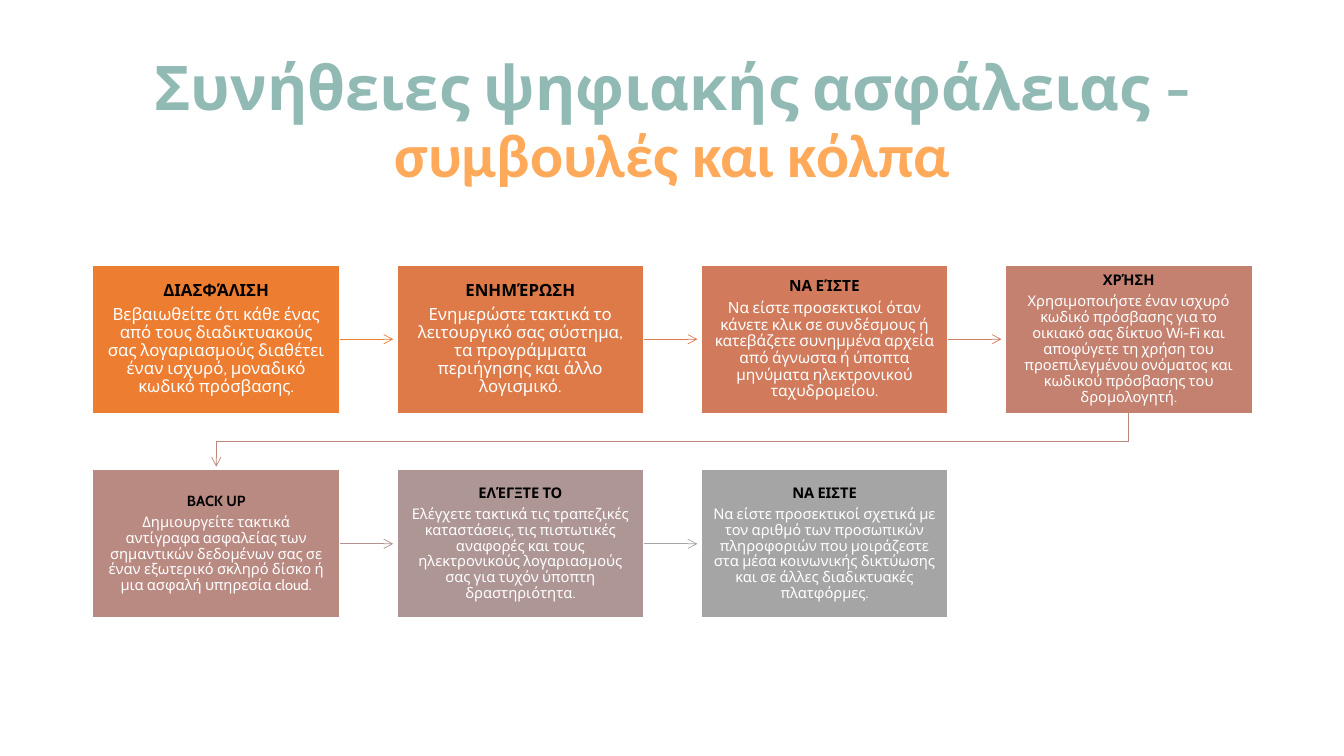
from lxml import etree
from pptx import Presentation
from pptx.dml.color import RGBColor
from pptx.enum.shapes import MSO_CONNECTOR as CONNECTOR, MSO_SHAPE as SHAPE
from pptx.enum.text import MSO_ANCHOR as ANCHOR, MSO_AUTO_SIZE as AUTO_SIZE, PP_ALIGN as ALIGN
from pptx.oxml.ns import qn
from pptx.util import Inches, Pt

# Grid of steps
COLUMNS = 4
LEFT, TOP = 0.92, 2.63
CONTENT_W = 11.5
STEP_W, STEP_H = 2.45, 1.47
PITCH_X = STEP_W + (CONTENT_W - COLUMNS * STEP_W) / (COLUMNS - 1)
PITCH_Y = 2.03
ARROW_LENGTH = 0.53

# Heading, advice, text size, fill, colour of the arrow that follows
STEPS = [
    ("ΔΙΑΣΦΆΛΙΣΗ",
     "Βεβαιωθείτε ότι κάθε ένας από τους διαδικτυακούς σας λογαριασμούς διαθέτει "
     "έναν ισχυρό, μοναδικό κωδικό πρόσβασης.", 12, "ED7D31", "ED7D31"),
    ("ΕΝΗΜΈΡΩΣΗ",
     "Ενημερώστε τακτικά το λειτουργικό σας σύστημα, τα προγράμματα περιήγησης "
     "και άλλο λογισμικό.", 12, "DE7A47", "DC7A4B"),
    ("ΝΑ ΕΊΣΤΕ",
     "Να είστε προσεκτικοί όταν κάνετε κλικ σε συνδέσμους ή κατεβάζετε συνημμένα "
     "αρχεία από άγνωστα ή ύποπτα μηνύματα ηλεκτρονικού ταχυδρομείου.",
     11, "D17B5C", "CC7D64"),
    ("ΧΡΉΣΗ",
     "Χρησιμοποιήστε έναν ισχυρό κωδικό πρόσβασης για το οικιακό σας δίκτυο Wi-Fi "
     "και αποφύγετε τη χρήση του προεπιλεγμένου ονόματος και κωδικού πρόσβασης "
     "του δρομολογητή.", 10.5, "C48170", "BD867B"),
    ("BACK UP",
     "Δημιουργείτε τακτικά αντίγραφα ασφαλείας των σημαντικών δεδομένων σας σε "
     "έναν εξωτερικό σκληρό δίσκο ή\nμια ασφαλή υπηρεσία cloud.",
     10.5, "B98A82", "B09391"),
    ("ΕΛΈΓΞΤΕ ΤΟ",
     "Ελέγχετε τακτικά τις τραπεζικές καταστάσεις, τις πιστωτικές αναφορές και "
     "τους ηλεκτρονικούς λογαριασμούς σας για τυχόν ύποπτη δραστηριότητα.",
     10.5, "AE9694", "A5A5A5"),
    ("ΝΑ ΕΙΣΤΕ",
     "Να είστε προσεκτικοί σχετικά με τον αριθμό των προσωπικών πληροφοριών που "
     "μοιράζεστε στα μέσα κοινωνικής δικτύωσης και σε άλλες διαδικτυακές "
     "πλατφόρμες.", 10.5, "A5A5A5", None),
]


def color(value):
    return RGBColor.from_string(value)


def write(paragraph, text, *, size, font, fill, bold=False, after=0):
    """Add text to a centred paragraph, with line breaks at newlines."""
    paragraph.alignment = ALIGN.CENTER
    paragraph.line_spacing = 0.9
    paragraph.space_after = Pt(after)
    for number, line in enumerate(text.split("\n")):
        if number:
            paragraph.add_line_break()
        run = paragraph.add_run()
        run.text = line
        run.font.size = Pt(size)
        run.font.name = font
        run.font.bold = bold
        run.font.color.rgb = color(fill)


class FlowSlide:
    font = "Cabin"
    arrow_width = 0.5

    def __init__(self, deck):
        self.slide = deck.slides.add_slide(deck.slide_layouts[5])
        self.shapes = self.slide.shapes

    def title(self, parts):
        title = self.shapes.title
        title.left, title.top = Inches(LEFT), Inches(0.61)
        title.width, title.height = Inches(CONTENT_W), Inches(1.24)
        frame = title.text_frame
        frame.word_wrap = True
        frame.auto_size = AUTO_SIZE.NONE
        frame.vertical_anchor = ANCHOR.MIDDLE
        for text, font, fill in parts:
            write(frame.paragraphs[0], text, size=44, font=font, fill=fill,
                  bold=True, after=6)

    def step(self, x, y, heading, advice, size, fill):
        box = self.shapes.add_shape(SHAPE.RECTANGLE, Inches(x), Inches(y),
                                    Inches(STEP_W), Inches(STEP_H))
        box.shadow.inherit = False
        box.fill.solid()
        box.fill.fore_color.rgb = color(fill)
        box.line.color.rgb = color("FFFFFF")
        box.line.width = Pt(1)
        frame = box.text_frame
        frame.word_wrap = True
        frame.vertical_anchor = ANCHOR.MIDDLE
        frame.margin_left = frame.margin_right = Inches(0.12)
        frame.margin_top = frame.margin_bottom = Inches(0.13)
        gap = 0.35 * size
        write(frame.paragraphs[0], heading, size=size, font=self.font,
              fill="000000", bold=True, after=gap)
        write(frame.add_paragraph(), advice, size=size, font=self.font,
              fill="FFFFFF", after=gap)

    def style_arrow(self, arrow, stroke):
        arrow.line.color.rgb = color(stroke)
        arrow.line.width = Pt(self.arrow_width)
        etree.SubElement(arrow.line._get_or_add_ln(), qn("a:tailEnd"), type="arrow")

    def arrow(self, x, y, stroke):
        arrow = self.shapes.add_connector(CONNECTOR.STRAIGHT, Inches(x), Inches(y),
                                          Inches(x + ARROW_LENGTH), Inches(y))
        self.style_arrow(arrow, stroke)
        etree.SubElement(arrow._element.spPr, qn("a:effectLst"))

    def bent_arrow(self, points, stroke):
        start, *rest = [(Inches(x), Inches(y)) for x, y in points]
        builder = self.shapes.build_freeform(*start)
        builder.add_line_segments(rest, close=False)
        arrow = builder.convert_to_shape()
        arrow.shadow.inherit = False
        arrow.fill.background()
        self.style_arrow(arrow, stroke)


def main():
    deck = Presentation()
    deck.slide_width, deck.slide_height = Inches(13.33), Inches(7.5)
    flow = FlowSlide(deck)

    # Title
    flow.title([("Συνήθειες ψηφιακής ασφάλειας - ", "Cabin", "92BAB5"),
                ("συμβουλές και κόλπα", "Calibri", "FFAA5A")])

    # Steps, each with the arrow to the next one
    for index, (heading, advice, size, fill, stroke) in enumerate(STEPS):
        row, column = divmod(index, COLUMNS)
        x, y = LEFT + column * PITCH_X, TOP + row * PITCH_Y
        flow.step(x, y, heading, advice, size, fill)
        if not stroke:
            continue
        if column < COLUMNS - 1:
            flow.arrow(x + STEP_W, y + STEP_H / 2, stroke)
        else:
            start_x, end_x = x + STEP_W / 2, LEFT + STEP_W / 2
            bottom = y + STEP_H
            turn = bottom + 0.28
            flow.bent_arrow([(start_x, bottom), (start_x, turn), (end_x, turn),
                             (end_x, bottom + ARROW_LENGTH)], stroke)

    deck.save("out.pptx")


if __name__ == "__main__":
    main()
